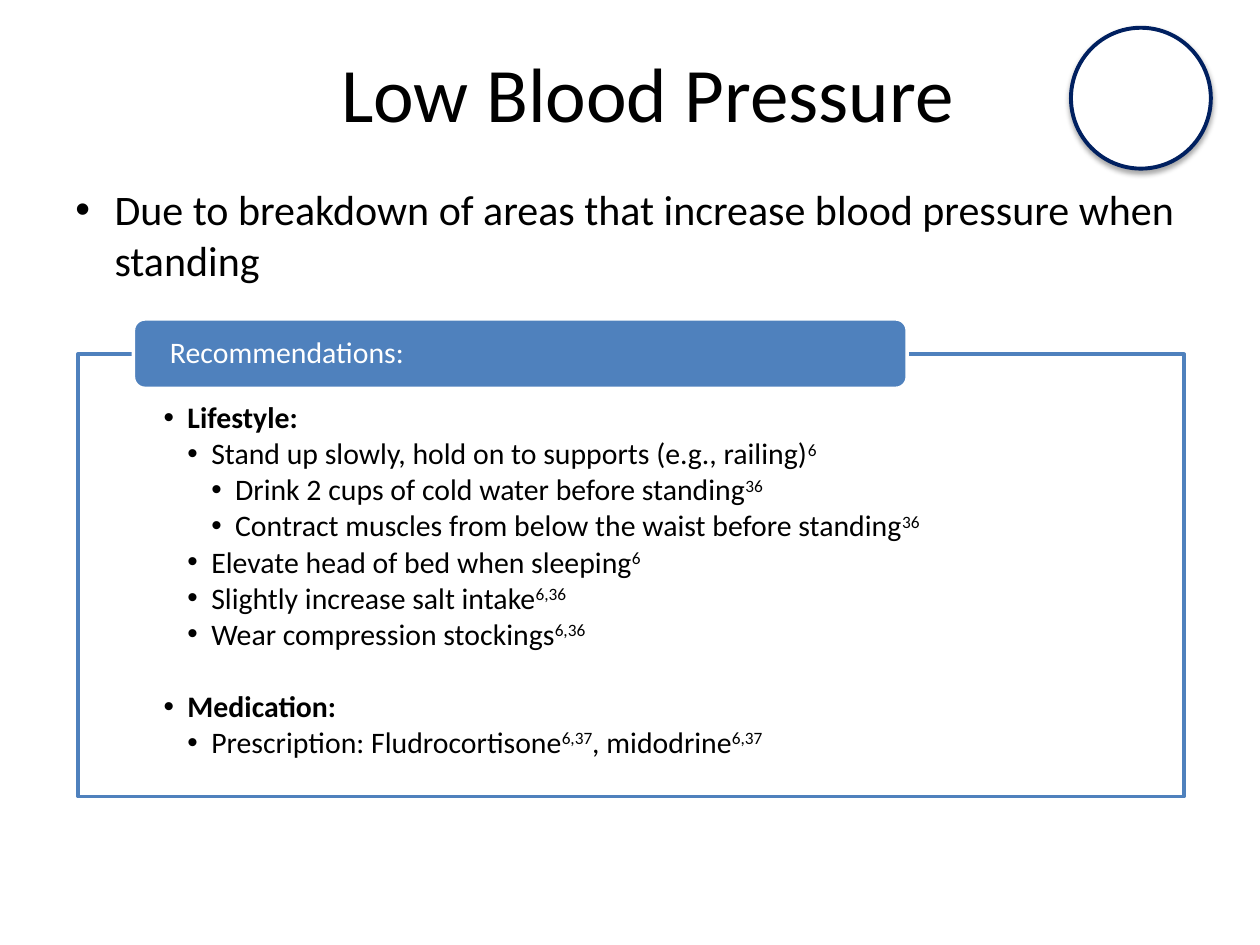
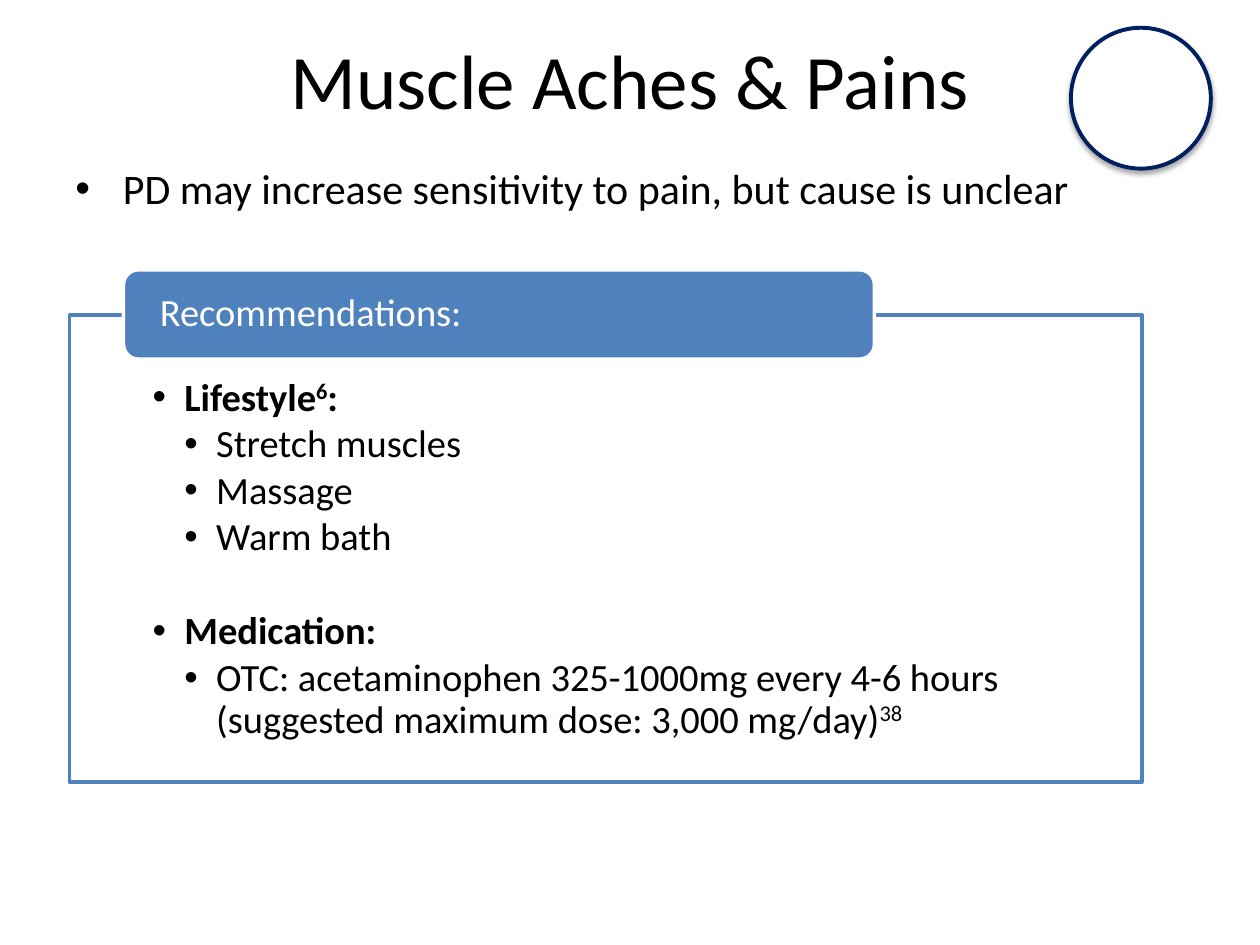
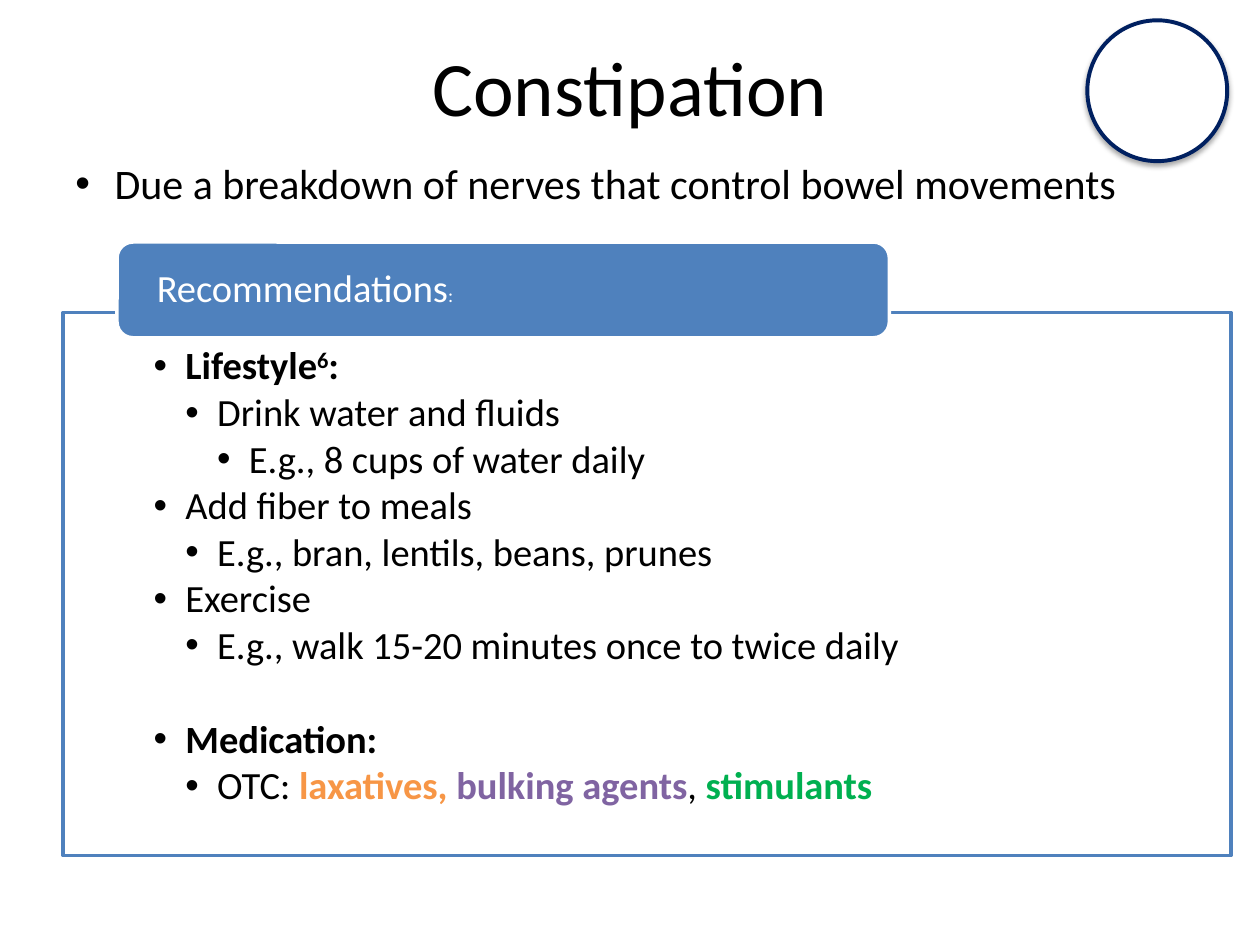
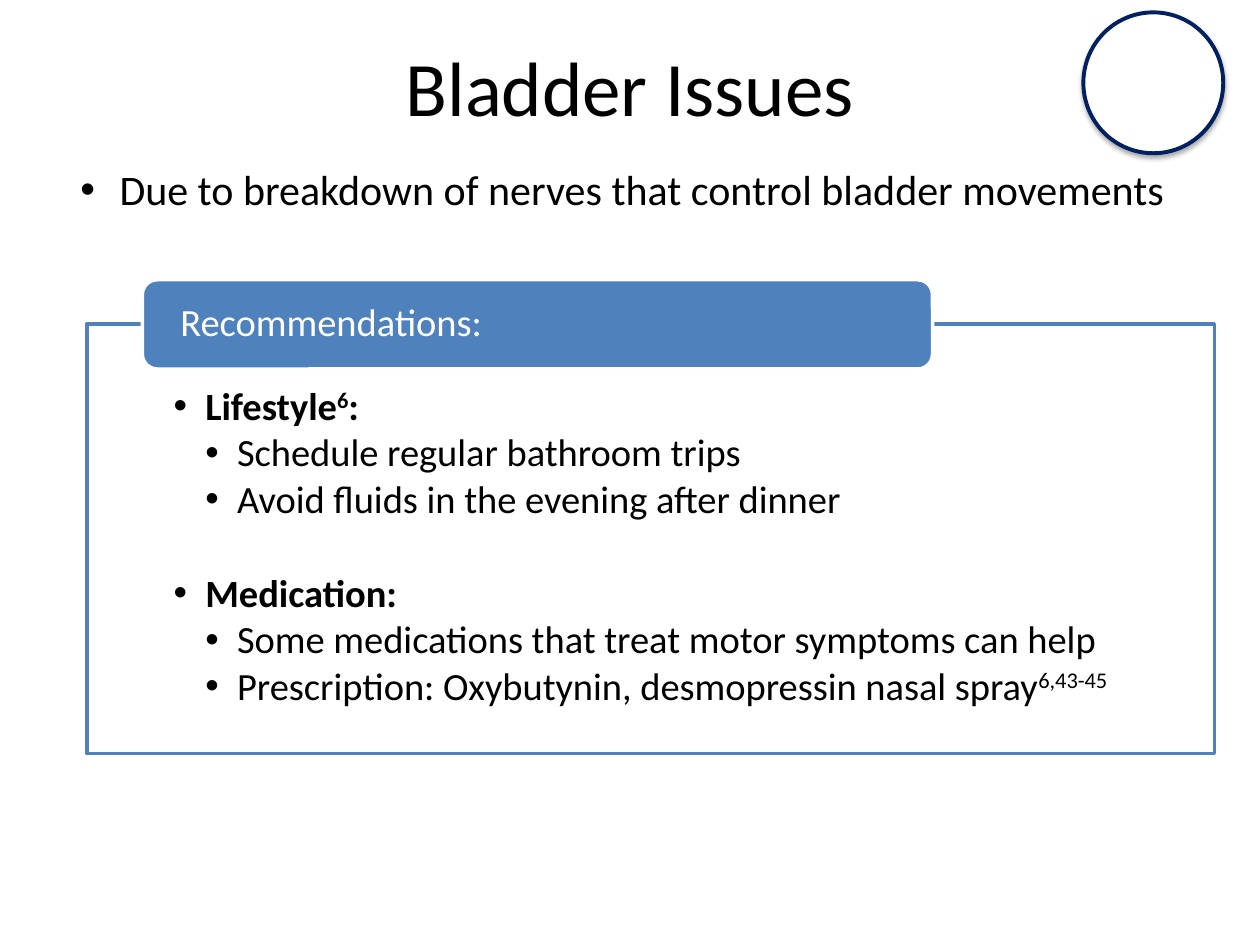
from dataclasses import dataclass

from lxml.etree import SubElement
from pptx import Presentation
from pptx.dml.color import RGBColor
from pptx.enum.shapes import MSO_SHAPE
from pptx.enum.text import MSO_ANCHOR, MSO_AUTO_SIZE, PP_ALIGN
from pptx.oxml.ns import qn
from pptx.util import Cm, Pt

FONT = "Calibri"
BLACK = RGBColor(0x00, 0x00, 0x00)
WHITE = RGBColor(0xFF, 0xFF, 0xFF)
BLUE = RGBColor(0x4F, 0x81, 0xBD)
NAVY = RGBColor(0x00, 0x20, 0x60)
ORANGE = RGBColor(0xF7, 0x96, 0x46)
PURPLE = RGBColor(0x80, 0x64, 0xA2)
GREEN = RGBColor(0x00, 0xB0, 0x50)

TITLE_SIZE, LEAD_SIZE = 44, 24
TITLE_W, TITLE_H = 22.86, 3.18
CIRCLE_W, CIRCLE_H = 2.82, 2.84
LINE_SPACING = 0.9
SPACE_AFTER = 0.13  # share of the font size
SECTION_GAP = 1.23  # share of the font size


@dataclass(frozen=True)
class Box:
    """Left, top, width and height in centimetres."""
    left: float
    top: float
    width: float
    height: float

    def emu(self) -> tuple:
        return Cm(self.left), Cm(self.top), Cm(self.width), Cm(self.height)


@dataclass(frozen=True)
class Run:
    text: str
    bold: bool = False
    color: RGBColor = BLACK
    superscript: bool = False


@dataclass(frozen=True)
class Line:
    level: int
    runs: list[Run]
    gap: bool = False


@dataclass(frozen=True)
class Topic:
    title: str
    title_at: tuple[float, float]
    circle_at: tuple[float, float]
    lead: str
    lead_box: Box
    panel: Box
    tab: Box
    side_inset: float
    top_inset: float
    lines: list[Line]
    lead_indent: float = 0.79
    size: float = 22
    step: float = 0.64
    colon_size: float = 22


def line(level: int, text: str, bold: bool = False, gap: bool = False) -> Line:
    """Split text at each ^; every second piece is superscript."""
    runs = [Run(piece, bold, superscript=i % 2 == 1)
            for i, piece in enumerate(text.split("^")) if piece]
    return Line(level, runs, gap)


TOPICS = [
    Topic(
        "Low Blood Pressure", (1.63, 0.25), (21.59, 0.56),
        "Due to breakdown of areas that increase blood pressure when standing",
        Box(1.27, 3.58, 23.22, 2.31),
        Box(1.57, 7.14, 22.3, 8.92), Box(2.69, 6.43, 15.6, 1.4), 1.73, 0.99,
        [
            line(1, "Lifestyle:", bold=True),
            line(2, "Stand up slowly, hold on to supports (e.g., railing)^6"),
            line(3, "Drink 2 cups of cold water before standing^36"),
            line(3, "Contract muscles from below the waist before standing^36"),
            line(2, "Elevate head of bed when sleeping^6"),
            line(2, "Slightly increase salt intake^6,36"),
            line(2, "Wear compression stockings^6,36"),
            line(1, "Medication:", bold=True, gap=True),
            line(2, "Prescription: Fludrocortisone^6,37^, midodrine^6,37"),
        ],
        size=17, step=0.48, colon_size=17,
    ),
    Topic(
        "Muscle Aches & Pains", (1.27, 0), (21.59, 0.56),
        "PD may increase sensitivity to pain, but cause is unclear",
        Box(1.27, 3.15, 22.3, 1.27),
        Box(1.4, 6.35, 21.62, 9.42), Box(2.49, 5.44, 15.14, 1.8), 1.68, 1.27,
        [
            line(1, "Lifestyle^6^:", bold=True),
            line(2, "Stretch muscles"),
            line(2, "Massage"),
            line(2, "Warm bath"),
            line(1, "Medication:", bold=True, gap=True),
            line(2, "OTC: acetaminophen 325-1000mg every 4-6 hours "
                    "(suggested maximum dose: 3,000 mg/day)^38"),
        ],
        lead_indent=0.96,
    ),
    Topic(
        "Constipation", (1.27, 0.13), (21.92, 0.41),
        "Due a breakdown of nerves that control bowel movements",
        Box(1.27, 3.05, 22.3, 1.27),
        Box(1.27, 6.3, 23.55, 10.95), Box(2.36, 4.88, 15.57, 1.93), 1.83, 0.69,
        [
            line(1, "Lifestyle^6^:", bold=True),
            line(2, "Drink water and fluids"),
            line(3, "E.g., 8 cups of water daily"),
            line(1, "Add fiber to meals"),
            line(2, "E.g., bran, lentils, beans, prunes"),
            line(1, "Exercise"),
            line(2, "E.g., walk 15-20 minutes once to twice daily"),
            line(1, "Medication:", bold=True, gap=True),
            Line(2, [
                Run("OTC: "),
                Run("laxatives, ", True, ORANGE),
                Run("bulking agents", True, PURPLE),
                Run(", "),
                Run("stimulants", True, GREEN),
            ]),
        ],
        colon_size=11,
    ),
    Topic(
        "Bladder Issues", (1.27, 0.13), (21.84, 0.25),
        "Due to breakdown of nerves that control bladder movements",
        Box(1.37, 3.18, 22.73, 1.27),
        Box(1.75, 6.53, 22.73, 8.66), Box(2.87, 5.64, 15.93, 1.8), 1.75, 1.27,
        [
            line(1, "Lifestyle^6^:", bold=True),
            line(2, "Schedule regular bathroom trips"),
            line(2, "Avoid fluids in the evening after dinner"),
            line(1, "Medication:", bold=True, gap=True),
            line(2, "Some medications that treat motor symptoms can help"),
            line(2, "Prescription: Oxybutynin, desmopressin nasal spray^6,43-45"),
        ],
    ),
]


def format_run(r, size: float, color: RGBColor, bold: bool = False) -> None:
    r.font.name = FONT
    r.font.size = Pt(size)
    r.font.bold = bold
    r.font.color.rgb = color


def set_bullet(p, left: float, hanging: float) -> None:
    pPr = p._p.get_or_add_pPr()
    pPr.set("marL", str(Cm(left)))
    pPr.set("indent", str(-Cm(hanging)))
    SubElement(pPr, qn("a:buFont")).set("typeface", "Arial")
    SubElement(pPr, qn("a:buChar")).set("char", "•")


def add_box(s, kind: MSO_SHAPE, box: Box, fill: RGBColor, border: RGBColor,
            weight: float = 2):
    sp = s.shapes.add_shape(kind, *box.emu())
    sp.shadow.inherit = False
    sp.fill.solid()
    sp.fill.fore_color.rgb = fill
    sp.line.color.rgb = border
    sp.line.width = Pt(weight)
    return sp


def set_insets(tf, side: float, top: float) -> None:
    tf.word_wrap = True
    tf.margin_left = tf.margin_right = Cm(side)
    tf.margin_top = Cm(top)
    tf.margin_bottom = 0


def add_circle(s, left: float, top: float) -> None:
    """Draw the corner circle with a soft shadow below it."""
    sp = add_box(s, MSO_SHAPE.OVAL, Box(left, top, CIRCLE_W, CIRCLE_H),
                 WHITE, NAVY, 2.25)
    effects = sp._element.spPr.find(qn("a:effectLst"))
    shadow = SubElement(effects, qn("a:outerShdw"), blurRad=str(Pt(3.1)),
                        dist=str(Pt(1.8)), dir="5400000", rotWithShape="0")
    color = SubElement(shadow, qn("a:srgbClr"), val=str(BLACK))
    SubElement(color, qn("a:alpha"), val="35000")


def add_title(s, topic: Topic) -> None:
    sp = s.shapes.title
    sp.left, sp.top, sp.width, sp.height = Box(*topic.title_at, TITLE_W, TITLE_H).emu()
    tf = sp.text_frame
    tf.text = topic.title
    tf.vertical_anchor = MSO_ANCHOR.MIDDLE
    p = tf.paragraphs[0]
    p.alignment = PP_ALIGN.CENTER
    format_run(p.runs[0], TITLE_SIZE, BLACK)


def add_lead(s, topic: Topic) -> None:
    tf = s.shapes.add_textbox(*topic.lead_box.emu()).text_frame
    tf.word_wrap = True
    tf.auto_size = MSO_AUTO_SIZE.SHAPE_TO_FIT_TEXT
    tf.text = topic.lead
    p = tf.paragraphs[0]
    set_bullet(p, topic.lead_indent, topic.lead_indent)
    format_run(p.runs[0], LEAD_SIZE, BLACK)


def add_panel(s, topic: Topic) -> None:
    sp = add_box(s, MSO_SHAPE.RECTANGLE, topic.panel, WHITE, BLUE)
    color = sp._element.spPr.find(qn("a:solidFill"))[0]
    SubElement(color, qn("a:alpha"), val="90000")
    tf = sp.text_frame
    set_insets(tf, topic.side_inset, topic.top_inset)
    tf.vertical_anchor = MSO_ANCHOR.TOP
    for i, item in enumerate(topic.lines):
        p = tf.add_paragraph() if i else tf.paragraphs[0]
        p.alignment = PP_ALIGN.LEFT
        p.level = item.level
        p.line_spacing = LINE_SPACING
        p.space_before = Pt(topic.size * SECTION_GAP if item.gap else 0)
        p.space_after = Pt(topic.size * SPACE_AFTER)
        set_bullet(p, item.level * topic.step, topic.step)
        for run in item.runs:
            r = p.add_run()
            r.text = run.text
            format_run(r, topic.size, run.color, run.bold)
            if run.superscript:
                r._r.get_or_add_rPr().set("baseline", "30000")


def add_tab(s, topic: Topic) -> None:
    """Draw the heading that sits on the panel's top edge."""
    tf = add_box(s, MSO_SHAPE.ROUNDED_RECTANGLE, topic.tab, BLUE, WHITE).text_frame
    set_insets(tf, topic.panel.width * 0.03, 0)
    tf.vertical_anchor = MSO_ANCHOR.MIDDLE
    p = tf.paragraphs[0]
    p.alignment = PP_ALIGN.LEFT
    p.line_spacing = LINE_SPACING
    for text, size in (("Recommendations", topic.size), (":", topic.colon_size)):
        r = p.add_run()
        r.text = text
        format_run(r, size, WHITE)


def main() -> None:
    prs = Presentation()
    prs.slide_width, prs.slide_height = Cm(25.4), Cm(19.05)
    title_only = prs.slide_layouts[5]
    for topic in TOPICS:
        s = prs.slides.add_slide(title_only)
        add_circle(s, *topic.circle_at)
        add_title(s, topic)
        add_panel(s, topic)
        add_tab(s, topic)
        add_lead(s, topic)
    prs.save("out.pptx")


if __name__ == "__main__":
    main()
